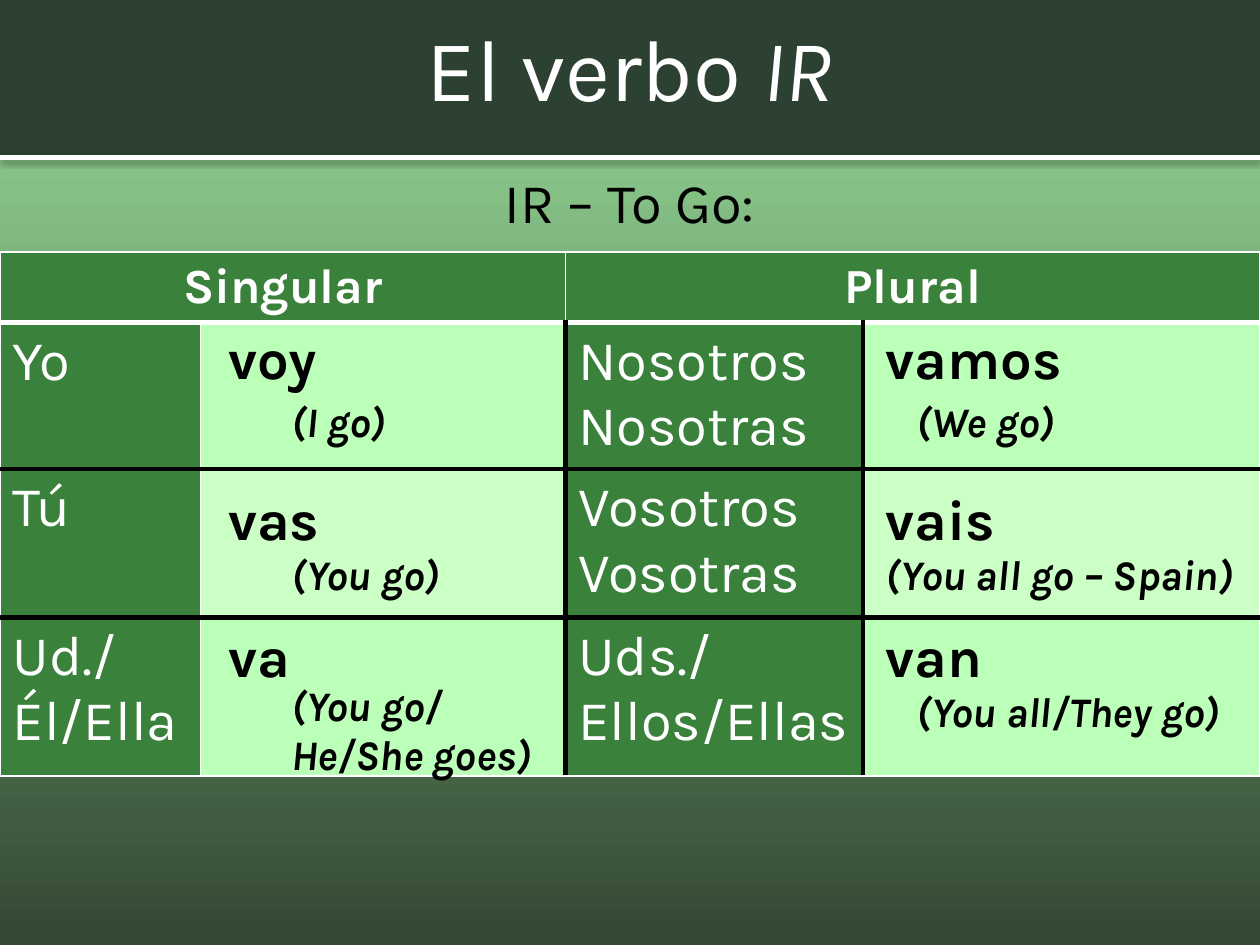
from dataclasses import dataclass

from lxml.etree import SubElement
from pptx import Presentation
from pptx.dml.color import RGBColor
from pptx.enum.shapes import MSO_CONNECTOR as Connector, MSO_SHAPE as Shape
from pptx.enum.text import MSO_ANCHOR as Anchor, MSO_AUTO_SIZE as AutoSize, PP_ALIGN as Align
from pptx.oxml.ns import qn
from pptx.util import Emu, Inches, Pt

SLIDE_WIDTH, SLIDE_HEIGHT = Inches(10), Inches(7.5)
PLAIN_TABLE = "{2D5ABB26-0587-4C30-8999-92F81FD0307C}"


@dataclass(frozen=True)
class Theme:
    font: str = "Karla"
    white: str = "FFFFFF"
    black: str = "000000"
    banner: str = "2C4132"
    label: str = "3A813B"
    answer: str = "BCFFB9"
    answer_alternate: str = "CCFFC6"
    background: tuple = ((0, "98DD9A"), (42, "70A06F"), (100, "344834"))
    title_size: int = 50
    verb_size: int = 32
    header_size: int = 28
    meaning_size: int = 24
    thick: int = 3
    thin: int = 1


@dataclass(frozen=True)
class Box:
    """Percentages of the slide's width (left, width) and height (top, height)."""
    left: float
    top: float
    width: float
    height: float

    def place(self) -> tuple:
        return across(self.left), down(self.top), across(self.width), down(self.height)


@dataclass(frozen=True)
class Answer:
    text: str
    box: Box
    meaning: bool = False


THEME = Theme()
COLUMNS = (15.9, 29, 23.6, 31.5)
ROWS = (7.47, 15.47, 15.73, 16.8)
PRONOUNS = (("Yo", "Nosotros\nNosotras"),
            ("Tú", "Vosotros\nVosotras"),
            ("Ud./Él/Ella", "Uds./Ellos/Ellas"))

VERB_TOPS = (34, 51.07, 65.6)
VERBS = ((17.1, 24.6, ("voy", "vas", "va")),
         (69.3, 28.2, ("vamos", "vais", "van")))
ANSWERS = [Answer(verb, Box(left, top, width, 8.4))
           for left, width, verbs in VERBS for verb, top in zip(verbs, VERB_TOPS)]
ANSWERS += [
    Answer("(I go)", Box(22.1, 41.6, 17.6, 6.67), True),
    Answer("(You go)", Box(22.1, 57.73, 21.4, 6.67), True),
    Answer("(You go/ He/She goes)", Box(22.1, 71.6, 21.4, 12), True),
    Answer("(We go)", Box(71.7, 41.6, 21.4, 6.67), True),
    Answer("(You all go – Spain)", Box(69.3, 57.73, 31.6, 6.67), True),
    Answer("(You all/They go)", Box(71.7, 72.27, 26.8, 6.67), True),
]


def across(percent: float) -> Emu:
    return Emu(round(SLIDE_WIDTH * percent / 100))


def down(percent: float) -> Emu:
    return Emu(round(SLIDE_HEIGHT * percent / 100))


def color(code: str) -> RGBColor:
    return RGBColor.from_string(code)


def write(frame, text: str, *, size: int, ink: str, bold: bool = False,
          italic: bool = False, align=Align.LEFT, tail: str = "") -> None:
    """Fill a text frame, one paragraph a line; tail is an italic ending."""
    frame.word_wrap = True
    for index, line in enumerate(text.split("\n")):
        para = frame.paragraphs[0] if index == 0 else frame.add_paragraph()
        para.alignment = align
        for words, slanted in ((line, italic), (tail, True)):
            if words:
                span = para.add_run()
                span.text = words
                span.font.name, span.font.size = THEME.font, Pt(size)
                span.font.bold, span.font.italic = bold, slanted
                span.font.color.rgb = color(ink)


def paint_background(page) -> None:
    page.background.fill.gradient()
    gradient = page._element.find(".//" + qn("a:gradFill"))
    stops = gradient.find(qn("a:gsLst"))
    for stop in list(stops):
        stops.remove(stop)
    for position, code in THEME.background:
        stop = SubElement(stops, qn("a:gs"), pos=str(position * 1000))
        SubElement(stop, qn("a:srgbClr"), val=code)
    gradient.find(qn("a:lin")).set("ang", "5400000")


def add_plain_table(page, box: Box, columns: tuple, rows: tuple):
    table = page.shapes.add_table(len(rows), len(columns), *box.place()).table
    table._tbl.tblPr.find(qn("a:tableStyleId")).text = PLAIN_TABLE
    table.first_row = table.horz_banding = False
    for column, width in zip(table.columns, columns):
        column.width = across(width)
    for row, height in zip(table.rows, rows):
        row.height = down(height)
    return table


def add_border(cell, side: str, ink: str, width: int) -> None:
    line = SubElement(cell._tc.get_or_add_tcPr(), qn("a:ln" + side), w=str(Pt(width)))
    SubElement(SubElement(line, qn("a:solidFill")), qn("a:srgbClr"), val=ink)


def border_cell(cell, row: int, column: int) -> None:
    """Black rules part the body, a thick white one ends the header."""
    def vertical(edge: int) -> tuple:
        heavy = row > 0 and edge in (2, 3)
        return (THEME.black, THEME.thick) if heavy else (THEME.white, THEME.thin)

    def horizontal(edge: int) -> tuple:
        ink = THEME.black if edge in (2, 3) else THEME.white
        return ink, THEME.thick if edge in (1, 2, 3) else THEME.thin

    add_border(cell, "L", *vertical(column))
    add_border(cell, "R", *vertical(column + 1))
    add_border(cell, "T", *horizontal(row))
    add_border(cell, "B", *horizontal(row + 1))


def add_conjugation_table(page) -> None:
    table = add_plain_table(page, Box(0, 26.67, 100, sum(ROWS)), COLUMNS, ROWS)
    for row in range(len(ROWS)):
        answer = THEME.answer_alternate if row == 2 else THEME.answer
        for column in range(len(COLUMNS)):
            cell = table.cell(row, column)
            border_cell(cell, row, column)
            cell.fill.solid()
            is_label = row == 0 or column % 2 == 0
            cell.fill.fore_color.rgb = color(THEME.label if is_label else answer)
    for column, heading in ((0, "Singular"), (2, "Plural")):
        table.cell(0, column).merge(table.cell(0, column + 1))
        write(table.cell(0, column).text_frame, heading, size=THEME.header_size,
              ink=THEME.white, bold=True, align=Align.CENTER)
    for row, pair in enumerate(PRONOUNS, start=1):
        for column, pronoun in zip((0, 2), pair):
            write(table.cell(row, column).text_frame, pronoun,
                  size=THEME.verb_size, ink=THEME.white)


def add_answer(page, answer: Answer) -> None:
    box = answer.box
    cell = add_plain_table(page, box, (box.width,), (box.height,)).cell(0, 0)
    cell.fill.background()
    write(cell.text_frame, answer.text, ink=THEME.black, bold=True, italic=answer.meaning,
          size=THEME.meaning_size if answer.meaning else THEME.verb_size)


def add_banner(page) -> None:
    banner = page.shapes.add_shape(Shape.RECTANGLE, *Box(0, 0, 100, 16.67).place())
    banner.shadow.inherit = False
    banner.fill.solid()
    banner.fill.fore_color.rgb = color(THEME.banner)
    banner.line.fill.background()


def add_banner_rule(page) -> None:
    edge = down(16.67)
    rule = page.shapes.add_connector(Connector.STRAIGHT, 0, edge, SLIDE_WIDTH, edge)
    rule.line.color.rgb, rule.line.width = color(THEME.white), Pt(THEME.thick)
    effects = SubElement(rule._element.spPr, qn("a:effectLst"))
    shadow = SubElement(effects, qn("a:outerShdw"), blurRad="40000", dist="20000",
                        dir="5400000", rotWithShape="0")
    shade = SubElement(shadow, qn("a:srgbClr"), val=THEME.black)
    SubElement(shade, qn("a:alpha"), val="38000")


def add_title(page) -> None:
    title = page.shapes.title
    title.left, title.top, title.width, title.height = Box(0, 0, 100, 14.13).place()
    page.shapes._spTree.append(title._element)  # in front of the banner
    title.text_frame.auto_size = AutoSize.NONE
    title.text_frame.vertical_anchor = Anchor.MIDDLE
    write(title.text_frame, "El verbo ", tail="IR", size=THEME.title_size,
          ink=THEME.white, align=Align.CENTER)


def main() -> None:
    deck = Presentation()
    deck.slide_width, deck.slide_height = SLIDE_WIDTH, SLIDE_HEIGHT
    page = deck.slides.add_slide(deck.slide_layouts[5])
    paint_background(page)
    # Banner, subtitle and title
    add_banner(page)
    subtitle = page.shapes.add_textbox(*Box(0, 16.67, 100, 69.33).place())
    subtitle.text_frame.margin_top = Inches(0.08)
    write(subtitle.text_frame, "IR – To Go:", size=THEME.verb_size,
          ink=THEME.black, align=Align.CENTER)
    add_banner_rule(page)
    add_title(page)
    # Conjugation table with the verb forms laid over it
    add_conjugation_table(page)
    for answer in ANSWERS:
        add_answer(page, answer)
    deck.save("out.pptx")


if __name__ == "__main__":
    main()
